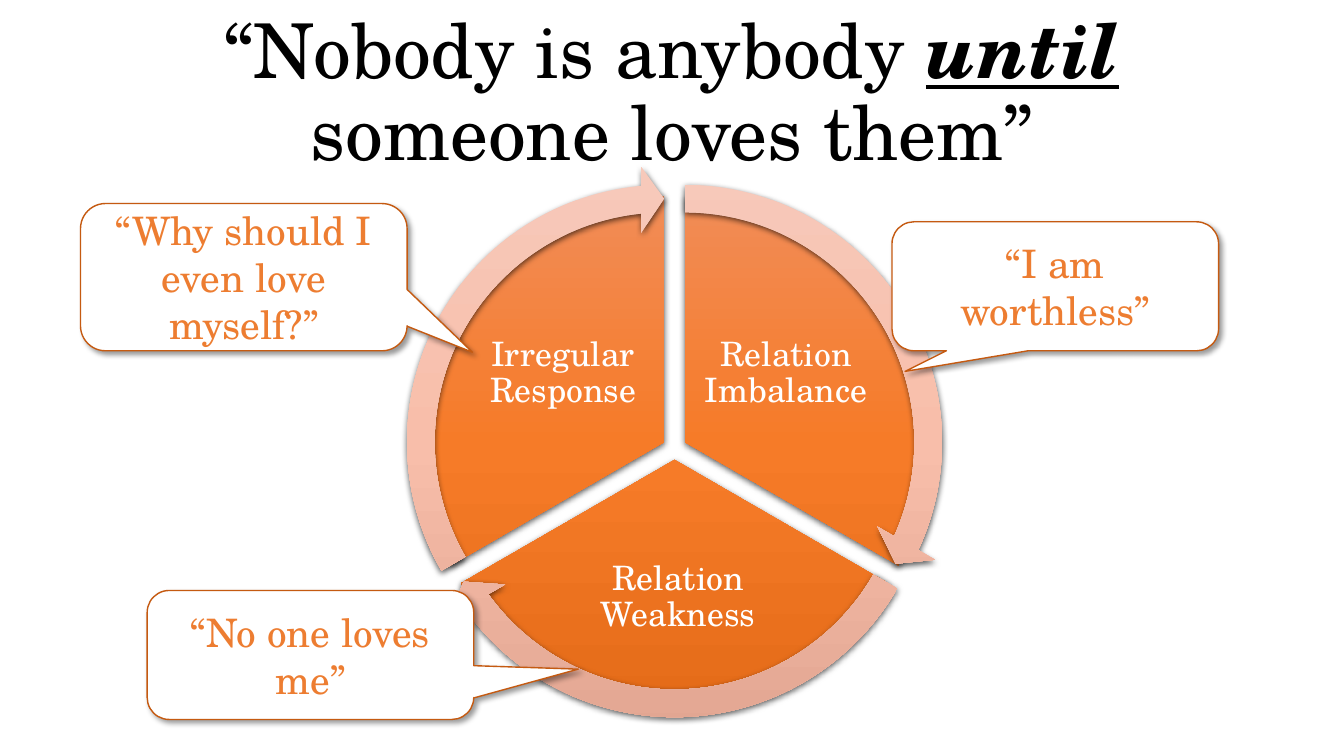
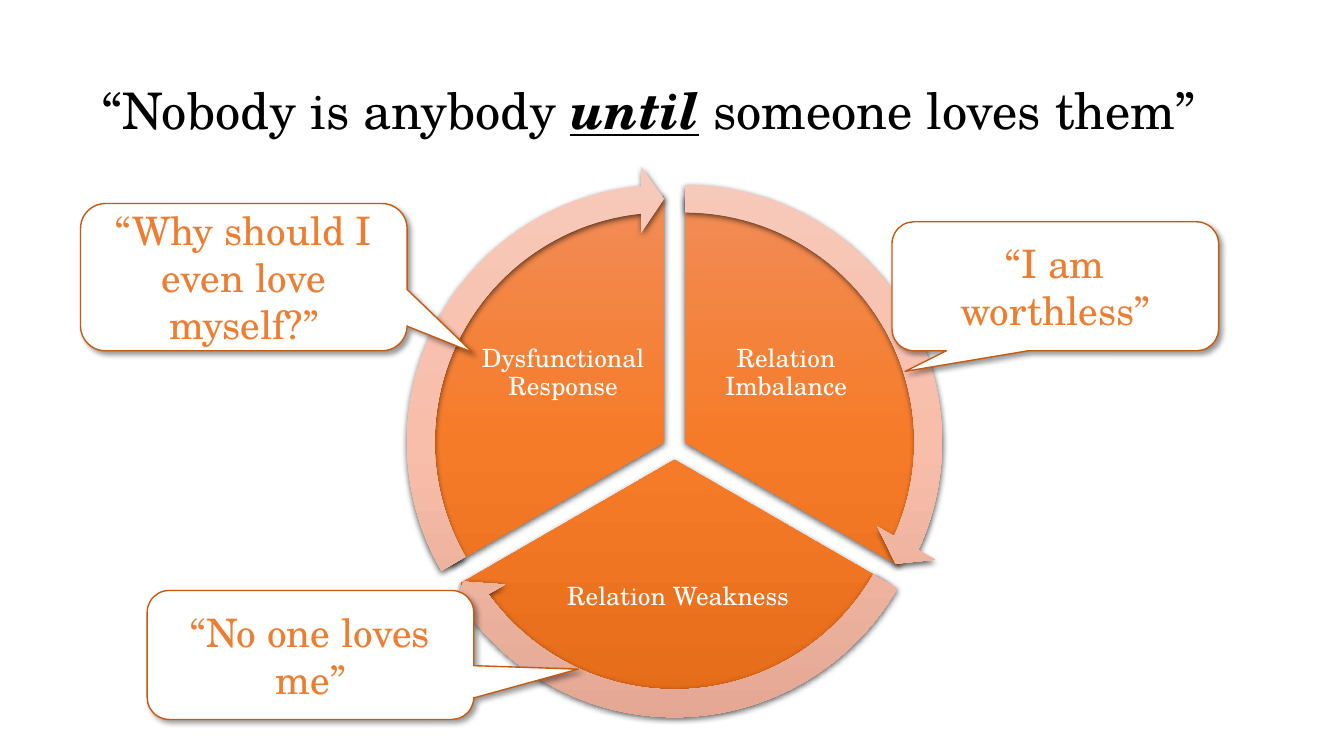
from math import cos, radians, sin

from lxml.etree import SubElement
from pptx import Presentation
from pptx.dml.color import RGBColor
from pptx.enum.shapes import MSO_SHAPE as Shape
from pptx.enum.text import MSO_ANCHOR as Anchor, PP_ALIGN as Align
from pptx.oxml import parse_xml
from pptx.oxml.ns import nsdecls, qn
from pptx.util import Cm, Pt

FONT = "TeX Gyre Schola"
COLORS = {
    "text": "000000",
    "white": "FFFFFF",
    "border": "C55A11",
    "quote": "ED7D31",
    "shadow": "000000",
}
SLICE_FADE = ("F18C57", "F67B28", "E56C19")
ARROW_FADE = ("F7C9BA", "F8BEAA", "E2A692")
SLICE_SHADOW = {"alpha": 63, "blur": 4.5, "dist": 1.5, "angle": 90}
CALLOUT_SHADOW = {"alpha": 40, "blur": 4, "dist": 3, "angle": 45}

HUB = (17, 11.29)
GAP = 0.3
SLICE_SIZE = 12.42
ARROW_SIZE = 13.94
SIDE_LABEL = (4.42, 3.68)
BASE_LABEL = (6.65, 3.25)
SLICES = [
    {"angle": -30, "span": (162, 18), "sweep": (14.73, 161.99),
     "offset": (2.81, -1.88), "label": SIDE_LABEL},
    {"angle": 90, "span": (18, 90), "sweep": (86.72, 18),
     "offset": (0.09, 3.77), "label": BASE_LABEL},
    {"angle": 210, "span": (90, 162), "sweep": (158.73, 90),
     "offset": (-2.81, -1.88), "label": SIDE_LABEL},
]
CALLOUTS = [
    ("“I am worthless”", (22.48, 5.59, 8.23, 3.25), (-0.46, 0.66)),
    ("“No one loves me”", (3.71, 14.88, 8.23, 3.25), (0.82, 0.11)),
    ("“Why should I even love myself?”", (2.03, 5.13, 8.23, 3.71), (0.7, 0.51)),
]
SLIDES = [
    {"box": (2.06, 0.56, 29.74, 3.68), "title_size": 54, "align": Align.CENTER,
     "label_size": 24,
     "labels": ["Relation Imbalance", "Relation Weakness", "Irregular Response"]},
    {"box": (2.34, 1.02, 29.21, 3.68), "title_size": 36, "align": Align.LEFT,
     "label_size": 18,
     "labels": ["Relation Imbalance", "Relation Weakness", "Dysfunctional Response"]},
]


def rgb(name):
    """Return the named colour."""
    return RGBColor.from_string(COLORS[name])


def lengths(box):
    """Convert centimetre values to lengths."""
    return [Cm(v) for v in box]


def centered(center, width, height):
    """Return the box of the given size around a centre."""
    x, y = center
    return x - width / 2, y - height / 2, width, height


def style_text(tf, size, color, align=Align.CENTER, spacing=None):
    """Style the first paragraph of a wrapped, vertically centred frame."""
    tf.word_wrap = True
    tf.vertical_anchor = Anchor.MIDDLE
    p = tf.paragraphs[0]
    p.alignment = align
    if spacing:
        p.line_spacing = spacing
    p.font.name = FONT
    p.font.size = Pt(size)
    p.font.color.rgb = rgb(color)
    return p


def add_shadow(sp, alpha, blur, dist, angle):
    """Give a shape an outer shadow."""
    sp.shadow.inherit = False
    effects = sp._element.spPr.find(qn("a:effectLst"))
    outer = SubElement(effects, qn("a:outerShdw"), blurRad=str(Pt(blur)),
                       dist=str(Pt(dist)), dir=str(angle * 60000),
                       algn="ctr", rotWithShape="0")
    color = SubElement(outer, qn("a:srgbClr"), val=COLORS["shadow"])
    SubElement(color, qn("a:alpha"), val=str(alpha * 1000))


def fill_fade(sp, fade):
    """Fill a shape with a three-stop fade from top to bottom."""
    stops = "".join(f'<a:gs pos="{i * 50000}"><a:srgbClr val="{c}"/></a:gs>'
                    for i, c in enumerate(fade))
    grad = parse_xml(f'<a:gradFill {nsdecls("a")} rotWithShape="1">'
                     f'<a:gsLst>{stops}</a:gsLst>'
                     '<a:lin ang="5400000" scaled="0"/></a:gradFill>')
    sp._element.spPr.find(qn("a:prstGeom")).addnext(grad)


def add_shape(shapes, kind, box, adjustments):
    """Add a preset shape with its adjustments."""
    sp = shapes.add_shape(kind, *lengths(box))
    for i, value in enumerate(adjustments):
        sp.adjustments[i] = value
    return sp


def add_faded(shapes, kind, center, size, adjustments, fade):
    """Add a borderless faded shape around a centre."""
    sp = add_shape(shapes, kind, centered(center, size, size), adjustments)
    fill_fade(sp, fade)
    sp.line.fill.background()
    add_shadow(sp, **SLICE_SHADOW)


def add_label(shapes, box, text, size):
    """Add a slice label."""
    tf = shapes.add_textbox(*lengths(box)).text_frame
    tf.margin_left = tf.margin_right = tf.margin_top = tf.margin_bottom = Cm(0.08)
    p = style_text(tf, size, "white", spacing=0.9)
    p.add_run().text = text


def add_cycle(s, hub, labels, size):
    """Add the three-slice cycle with its arrows around a hub."""
    shapes = s.shapes.add_group_shape().shapes
    x, y = hub
    centers = [(x + GAP * cos(radians(part["angle"])),
                y + GAP * sin(radians(part["angle"]))) for part in SLICES]
    for part, center, text in zip(SLICES, centers, labels):
        add_faded(shapes, Shape.PIE, center, SLICE_SIZE, part["span"], SLICE_FADE)
        dx, dy = part["offset"]
        add_label(shapes, centered((x + dx, y + dy), *part["label"]), text, size)
    for part, center in zip(SLICES, centers):
        sweep = (0.05, 3.27, *part["sweep"], 0.06)
        add_faded(shapes, Shape.CIRCULAR_ARROW, center, ARROW_SIZE, sweep, ARROW_FADE)


def add_callout(s, text, box, tip):
    """Add a quote in a speech bubble."""
    sp = add_shape(s.shapes, Shape.ROUNDED_RECTANGULAR_CALLOUT, box, (*tip, 0.17))
    sp.fill.solid()
    sp.fill.fore_color.rgb = rgb("white")
    sp.line.color.rgb = rgb("border")
    sp.line.width = Pt(1)
    add_shadow(sp, **CALLOUT_SHADOW)
    p = style_text(sp.text_frame, 28, "quote")
    p.add_run().text = text


def add_title(s, box, size, align):
    """Add the title with its stressed word."""
    tf = s.shapes.add_textbox(*lengths(box)).text_frame
    p = style_text(tf, size, "text", align, 0.9)
    for text in ("“Nobody is anybody ", "until", " someone loves them”"):
        r = p.add_run()
        r.text = text
        if text == "until":
            r.font.bold = r.font.italic = r.font.underline = True


def add_cycle_slide(prs, box, title_size, align, label_size, labels):
    """Add one slide with cycle, callouts and title."""
    s = prs.slides.add_slide(prs.slide_layouts[6])
    add_cycle(s, HUB, labels, label_size)
    for callout in CALLOUTS:
        add_callout(s, *callout)
    add_title(s, box, title_size, align)


def main():
    """Build and save the presentation."""
    prs = Presentation()
    prs.slide_width, prs.slide_height = Cm(33.87), Cm(19.05)
    for slide in SLIDES:
        add_cycle_slide(prs, **slide)
    prs.save("out.pptx")


if __name__ == "__main__":
    main()
